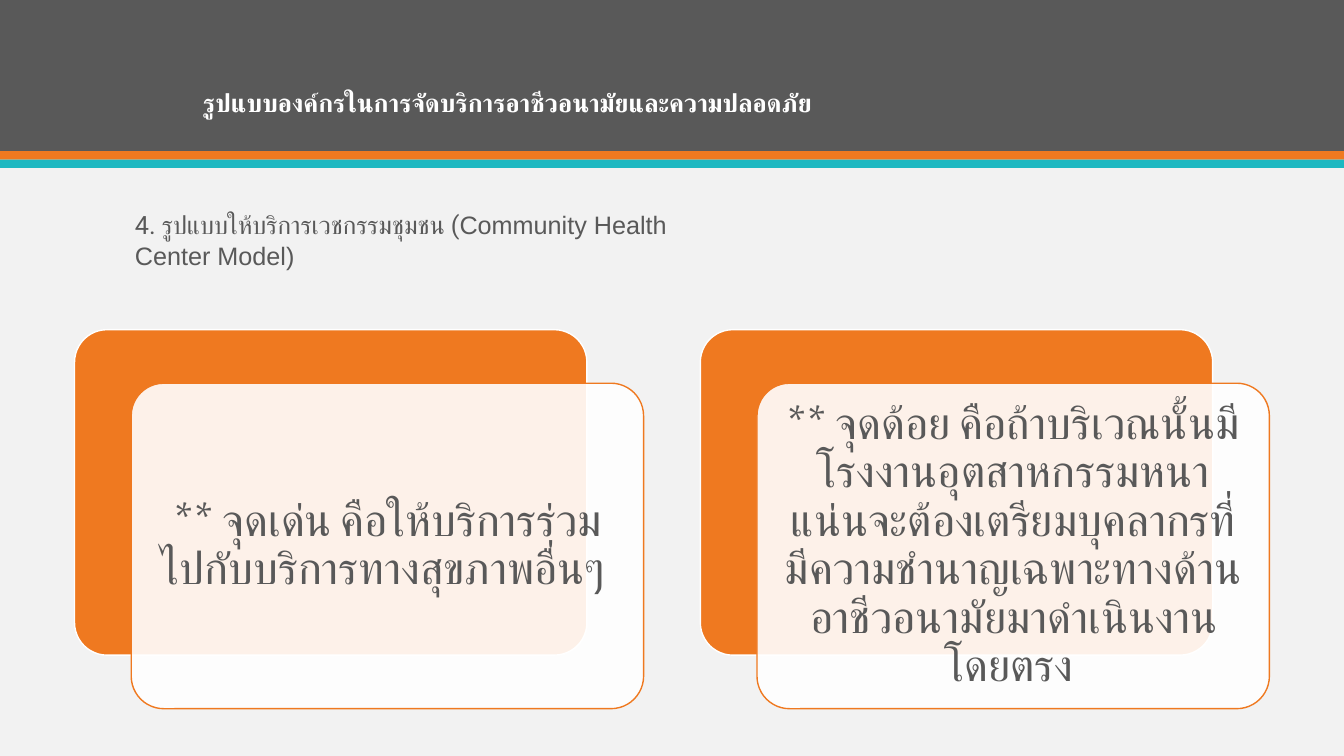
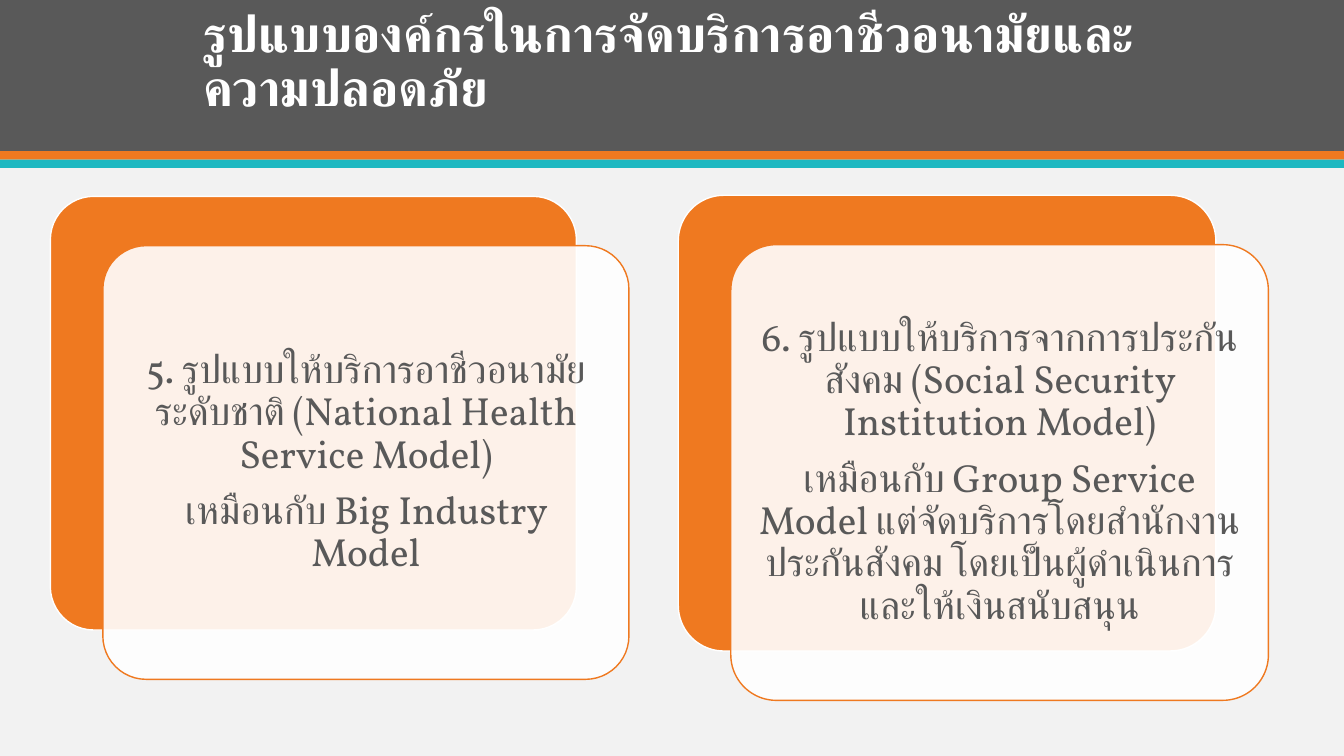
from lxml import etree
from pptx import Presentation
from pptx import util as u
from pptx.dml.color import RGBColor
from pptx.enum import shapes, text
from pptx.oxml.ns import qn

PX = 9525  # EMU per px: the slide is 1280 x 720 px
HUES = {"page": "F2F2F2", "dark": "595959", "main": "EF7920",
        "teal": "1EB8C1", "white": "FFFFFF"}
HEAD = "รูปแบบองค์กรในการจัดบริการอาชีวอนามัยและความปลอดภัย"
KIND = shapes.MSO_SHAPE


def hue(name):
    return RGBColor.from_string(HUES[name])


def place(box):
    return [u.Emu(n * PX) for n in box]


# Text
def style(para, size, face, ink, bold=False):
    font = para.font
    font.size, font.name, font.bold = u.Pt(size), face, bold
    font.color.rgb = hue(ink)
    # Thai letters take the complex-script face
    etree.SubElement(font._rPr, qn("a:cs"), typeface=face)


def label(slide, box, runs, size, ink, bold=False, low=False):
    """Indented text box; runs are pairs of text and face."""
    frame = slide.shapes.add_textbox(*place(box)).text_frame
    frame.word_wrap = True
    if low:
        frame.vertical_anchor = text.MSO_ANCHOR.BOTTOM
    para = frame.paragraphs[0]
    para._p.get_or_add_pPr().set("marL", str(48 * PX))
    style(para, size, runs[0][1], ink, bold)
    for words, face in runs:
        run = para.add_run()
        run.text = words
        if face != runs[0][1]:
            run.font.name = face
    return para


# Shapes
def block(slide, kind, box, fill, line=None):
    shape = slide.shapes.add_shape(kind, *place(box))
    shape.shadow.inherit = False
    shape.fill.solid()
    shape.fill.fore_color.rgb = hue(fill)
    if line:
        shape.line.color.rgb = hue(line)
        shape.line.width = u.Pt(1)
    else:
        shape.line.fill.background()
    return shape


def card(slide, box, shift, lines, size):
    """Orange plate with a translucent white text panel shifted over it."""
    left, top, wide, high = box
    front = (left + shift[0], top + shift[1], wide, high)
    plate = block(slide, KIND.ROUNDED_RECTANGLE, box, "main", "white")
    panel = block(slide, KIND.ROUNDED_RECTANGLE, front, "white", "main")
    for shape in (plate, panel):
        shape.adjustments[0] = 0.1
    tint = panel.fill._xPr.find(qn("a:solidFill"))[0]
    etree.SubElement(tint, qn("a:alpha"), val="90000")

    frame = panel.text_frame
    frame.word_wrap = True
    frame.vertical_anchor = text.MSO_ANCHOR.MIDDLE
    frame.margin_left = frame.margin_right = u.Emu(12 * PX)
    frame.margin_top = frame.margin_bottom = u.Emu(12 * PX)
    for i, words in enumerate(lines):
        para = frame.add_paragraph() if i else frame.paragraphs[0]
        para.text = words
        para.alignment = text.PP_ALIGN.CENTER
        para.line_spacing = 0.9
        para.space_after = u.Pt(round(size * 0.35))
        style(para, size, "Vollkorn", "dark")


# Shared slide frame: page colour, bands, title
def start(deck, size):
    slide = deck.slides.add_slide(deck.slide_layouts[6])
    slide.background.fill.solid()
    slide.background.fill.fore_color.rgb = hue("page")
    for top, high, fill in ((0, 144, "dark"), (144, 8, "main"), (152, 8, "teal")):
        block(slide, KIND.RECTANGLE, (0, top, 1280, high), fill)
    title = label(slide, (136, 27, 1008, 90), [(HEAD, "Roboto")], size,
                  "white", bold=True, low=True)
    title.line_spacing = 0.9
    return slide


def main():
    deck = Presentation()
    deck.slide_width, deck.slide_height = place((1280, 720))

    # Community health center: strength and weakness
    slide = start(deck, 18)
    pros = ["** จุดเด่น คือให้บริการร่วมไปกับบริการทางสุขภาพอื่นๆ "]
    cons = ["** จุดด้อย คือถ้าบริเวณนั้นมีโรงงานอุตสาหกรรมหนาแน่น"
            "จะต้องเตรียมบุคลากรที่มีความชำนาญเฉพาะทางด้าน"
            "อาชีวอนามัยมาดำเนินงานโดยตรง "]
    for left, lines in ((71, pros), (667, cons)):
        card(slide, (left, 314, 488, 310), (54, 51), lines, 32)
    label(slide, (71, 195, 639, 68),
          [("4. รูปแบบให้บริการเวชกรรมชุมชน (", "Roboto"),
           ("Community Health Center Model)", "Arial")], 18, "dark")

    # National service and social security models
    slide = start(deck, 36)
    state = ["5. รูปแบบให้บริการอาชีวอนามัยระดับชาติ (National Health Service Model)",
             "เหมือนกับ Big Industry Model"]
    fund = ["6. รูปแบบให้บริการจากการประกันสังคม (Social Security Institution Model)",
            "เหมือนกับ Group Service Model แต่จัดบริการโดยสำนักงานประกันสังคม "
            "โดยเป็นผู้ดำเนินการ และให้เงินสนับสนุน"]
    for box, lines in (((48, 187, 501, 413), state), ((646, 186, 512, 434), fund)):
        card(slide, box, (50, 47), lines, 28)

    deck.save("out.pptx")


if __name__ == "__main__":
    main()
